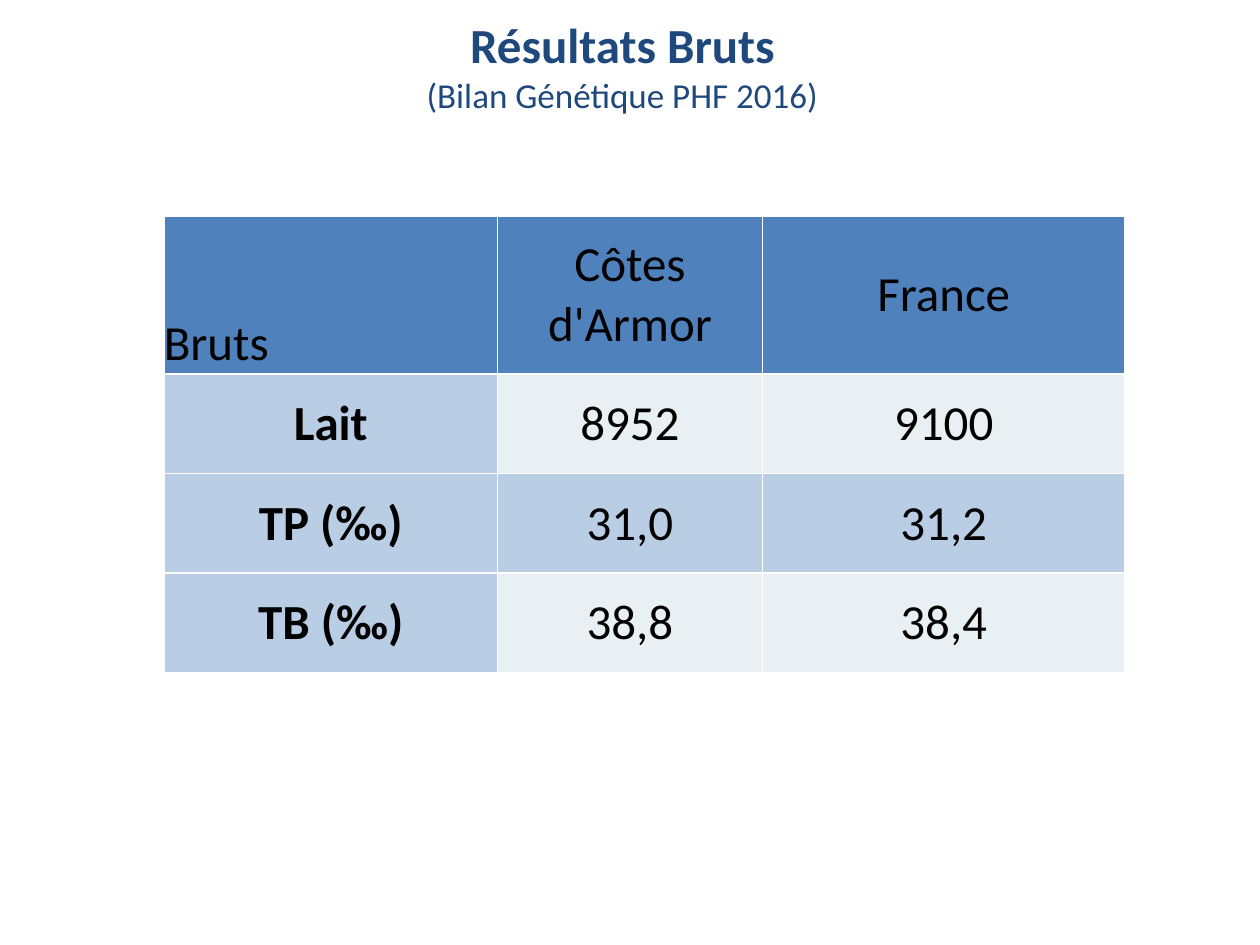
import pptx
import pptx.util
import pptx.dml.color
import pptx.enum.text
from lxml import etree
from pptx.oxml.ns import qn

Inches, Pt = pptx.util.Inches, pptx.util.Pt
ALIGN, ANCHOR = pptx.enum.text.PP_ALIGN, pptx.enum.text.MSO_ANCHOR

TITLE = "Résultats Bruts"
SUBTITLE = "(Bilan Génétique PHF 2016)"
ROWS = [
    ("Bruts", "Côtes d'Armor", "France"),
    ("Lait", "8952", "9100"),
    ("TP (‰)", "31,0", "31,2"),
    ("TB (‰)", "38,8", "38,4"),
]
COL_WIDTHS = (2.65, 2.1, 2.88)
ROW_HEIGHTS = (1.26, 0.79, 0.79, 0.79)
HEADER, BAND, PLAIN = "4F81BD", "B9CDE5", "E8F0F4"


def rgb(color):
    return pptx.dml.color.RGBColor.from_string(color)


def add_run(p, text, size, color, bold=False):
    r = p.add_run()
    r.text = text
    r.font.name = "Calibri"
    r.font.size = Pt(size)
    r.font.bold = bold
    r.font.color.rgb = rgb(color)


def set_borders(cell, color, top):
    tcPr = cell._tc.get_or_add_tcPr()
    for side, width in (("L", 1), ("R", 1), ("T", top), ("B", 1)):
        ln = etree.SubElement(tcPr, qn(f"a:ln{side}"), w=str(Pt(width)))
        fill = etree.SubElement(ln, qn("a:solidFill"))
        etree.SubElement(fill, qn("a:srgbClr"), val=color)


def cell_fill(row, col):
    if row == 0:
        return HEADER
    return BAND if col == 0 or row == 2 else PLAIN


def add_title(s):
    tf = s.shapes.add_textbox(Inches(0), Inches(0.13), Inches(9.88), Inches(0.77)).text_frame
    tf.word_wrap = True
    tf.vertical_anchor = ANCHOR.MIDDLE
    p = tf.paragraphs[0]
    p.alignment = ALIGN.CENTER
    add_run(p, TITLE, 28, "1F497D", True)
    p.add_line_break()
    add_run(p, SUBTITLE, 20, "1F497D")


def add_results(s):
    table = s.shapes.add_table(
        len(ROWS), len(COL_WIDTHS), Inches(1.3), Inches(1.71),
        Inches(sum(COL_WIDTHS)), Inches(sum(ROW_HEIGHTS))).table
    for column, width in zip(table.columns, COL_WIDTHS):
        column.width = Inches(width)
    for row, height in zip(table.rows, ROW_HEIGHTS):
        row.height = Inches(height)
    for i, texts in enumerate(ROWS):
        for j, text in enumerate(texts):
            corner = i == j == 0
            cell = table.cell(i, j)
            set_borders(cell, "FFFFFF", 1.5 if i == 0 else 1)
            cell.fill.solid()
            cell.fill.fore_color.rgb = rgb(cell_fill(i, j))
            cell.margin_left = cell.margin_right = cell.margin_top = cell.margin_bottom = 0
            cell.vertical_anchor = ANCHOR.BOTTOM if corner else ANCHOR.MIDDLE
            p = cell.text_frame.paragraphs[0]
            p.alignment = ALIGN.LEFT if corner else ALIGN.CENTER
            add_run(p, text, 28, "000000", i > 0 and j == 0)


def main():
    prs = pptx.Presentation()
    prs.slide_width, prs.slide_height = Inches(10), Inches(7.5)
    s = prs.slides.add_slide(prs.slide_layouts[6])
    add_title(s)
    add_results(s)
    prs.save("out.pptx")


if __name__ == "__main__":
    main()
